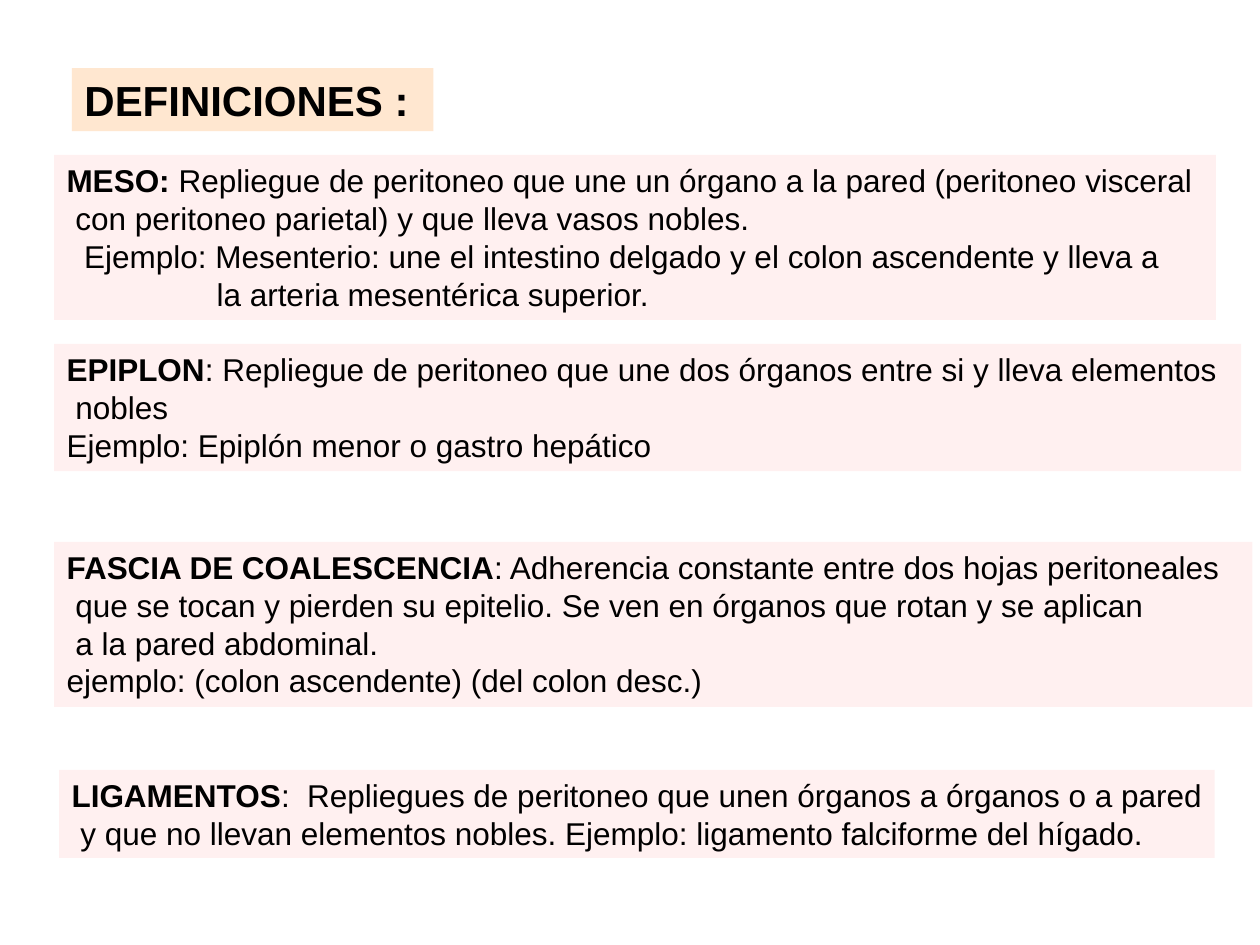
from lxml.etree import SubElement
from pptx import Presentation
from pptx.dml.color import RGBColor as Rgb
from pptx.enum.shapes import MSO_SHAPE as Kind
from pptx.enum.text import MSO_ANCHOR as Anchor, MSO_AUTO_SIZE as Fit, PP_ALIGN as Align
from pptx.oxml.ns import qn
from pptx.util import Inches, Pt

COLORS = {"title": "FFCC99", "card": "FFCCCC", "text": "000000"}
FONT = "Arial"
LEFT = 0.43
STEP = 0.07  # one indent level, in inches

# Each card: left, top, width, height, term, lines as (indent steps, text)
CARDS = [
    (LEFT, 1.23, 9.22, 1.31, "MESO:", [
        (0, " Repliegue de peritoneo que une un órgano a la pared (peritoneo visceral"),
        (1, "con peritoneo parietal) y que lleva vasos nobles."),
        (2, "Ejemplo: Mesenterio: une el intestino delgado y el colon ascendente y lleva a"),
        (17, "la arteria mesentérica superior.")]),
    (LEFT, 2.73, 9.42, 1.01, "EPIPLON", [
        (0, ": Repliegue de peritoneo que une dos órganos entre si y lleva elementos"),
        (1, "nobles"),
        (0, "Ejemplo: Epiplón menor o gastro hepático")]),
    (LEFT, 4.3, 9.51, 1.31, "FASCIA DE COALESCENCIA", [
        (0, ": Adherencia constante entre dos hojas peritoneales"),
        (1, "que se tocan y pierden su epitelio. Se ven en órganos que rotan y se aplican"),
        (1, "a la pared abdominal."),
        (0, "ejemplo: (colon ascendente) (del colon desc.)")]),
    (0.47, 6.11, 9.17, 0.7, "LIGAMENTOS", [
        (0, ":  Repliegues de peritoneo que unen órganos a órganos o a pared"),
        (1, "y que no llevan elementos nobles. Ejemplo: ligamento falciforme del hígado.")]),
]


def tint(shape, color, alpha):
    """Fill a shape with a see-through colour."""
    shape.fill.solid()
    shape.fill.fore_color.rgb = Rgb.from_string(COLORS[color])
    node = shape.fill._xPr.find(qn("a:solidFill"))[0]
    SubElement(node, qn("a:alpha")).set("val", str(alpha * 1000))


def set_frame(frame):
    frame.auto_size = Fit.NONE
    frame.word_wrap = True
    frame.vertical_anchor = Anchor.TOP
    frame.margin_left = Inches(0.1)
    frame.margin_right = 0
    frame.margin_top = frame.margin_bottom = Inches(0.05)


def add_run(para, text, size, bold=False):
    run = para.add_run()
    run.text = text
    font = run.font
    font.name, font.size, font.bold = FONT, Pt(size), bold
    font.color.rgb = Rgb.from_string(COLORS["text"])


def set_title(slide, text):
    title = slide.shapes.title
    title.left, title.top, title.width, title.height = map(
        Inches, (0.57, 0.54, 2.87, 0.5))
    tint(title, "title", 46)
    set_frame(title.text_frame)
    para = title.text_frame.paragraphs[0]
    para.alignment = Align.LEFT
    add_run(para, text, 24, True)


def add_card(slide, left, top, width, height, term, lines):
    card = slide.shapes.add_shape(
        Kind.RECTANGLE, *map(Inches, (left, top, width, height)))
    card.shadow.inherit = False
    card.line.fill.background()
    tint(card, "card", 28)
    frame = card.text_frame
    set_frame(frame)
    for row, (steps, text) in enumerate(lines):
        para = frame.add_paragraph() if row else frame.paragraphs[0]
        para.alignment = Align.LEFT
        props = para._p.get_or_add_pPr()
        props.set("marL", str(Inches(steps * STEP)))
        props.set("indent", "0")
        if row == 0:
            add_run(para, term, 18, True)
        add_run(para, text, 18)


def main():
    deck = Presentation()
    deck.slide_width, deck.slide_height = Inches(10), Inches(7.5)
    slide = deck.slides.add_slide(deck.slide_layouts[5])
    set_title(slide, "DEFINICIONES :")
    for card in CARDS:
        add_card(slide, *card)
    deck.save("out.pptx")


if __name__ == "__main__":
    main()
